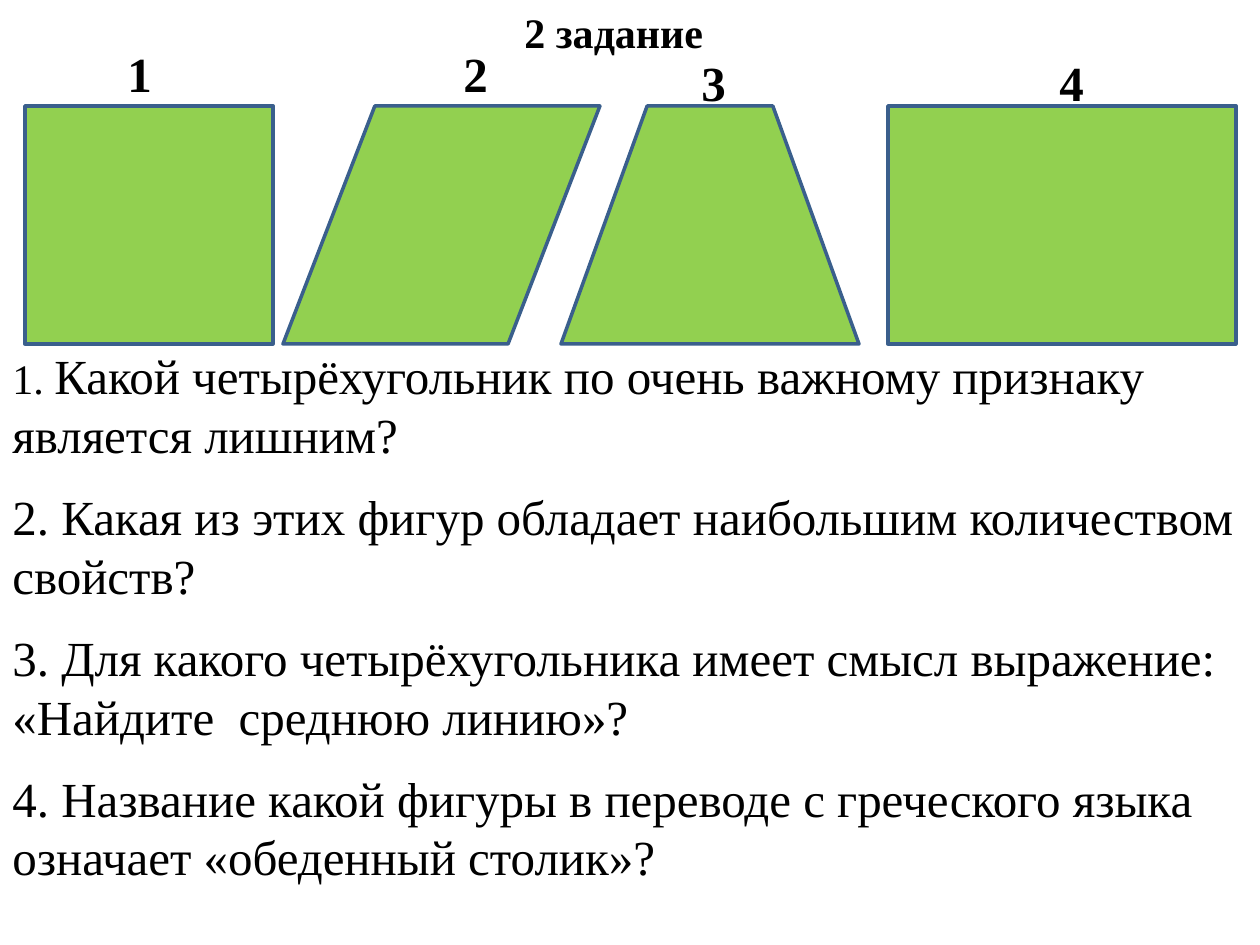
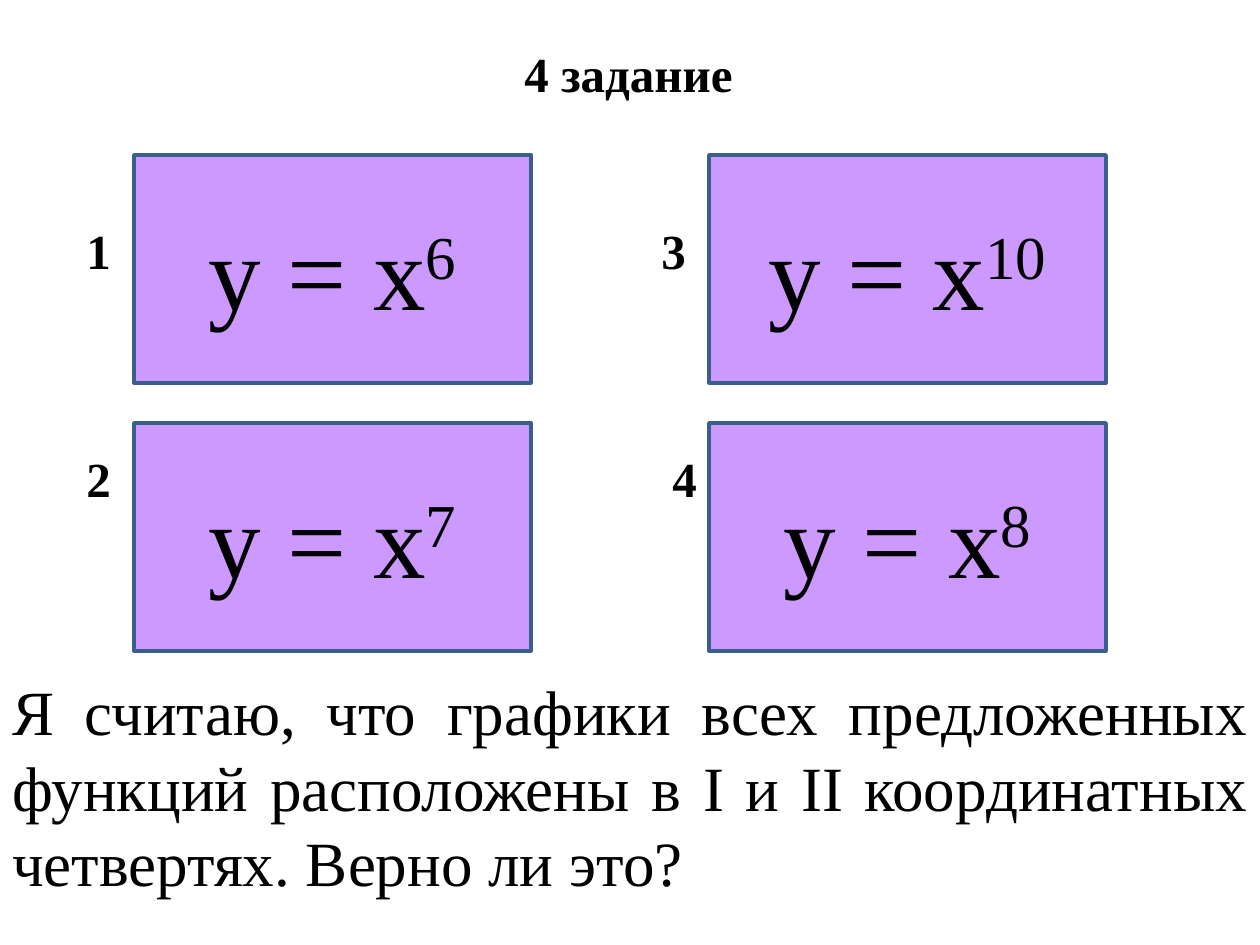
from dataclasses import dataclass

from pptx import Presentation
from pptx import util as u
from pptx.dml.color import RGBColor
from pptx.enum import shapes, text

SCALE = 914400 / 126  # EMU in one px
W, H = 1260, 945
SHAPE = shapes.MSO_SHAPE
ALIGN = text.PP_ALIGN


@dataclass(frozen=True)
class Theme:
    font: str = "Times New Roman"
    ink: str = "000000"
    outline: str = "3A5F8C"
    green: str = "92D050"
    violet: str = "CC99FF"
    outline_pt: int = 2
    small: int = 24
    body: int = 28
    large: int = 36
    formula: int = 60
    body_line: float = 33.5
    large_line: float = 43
    question_gap: float = 13.4


T = Theme()


def px(n):
    return u.Emu(round(n * SCALE))


def place(box):
    return [px(n) for n in box]


def add_run(p, words, size=T.body, bold=False, raised=False):
    r = p.add_run()
    r.text = words
    r.font.name, r.font.size, r.font.bold = T.font, u.Pt(size), bold
    r.font.color.rgb = RGBColor.from_string(T.ink)
    if raised:
        r._r.get_or_add_rPr().set("baseline", "30000")


def add_text(s, box, paragraphs, size=T.body, bold=False, wrap=True,
             align=ALIGN.LEFT, line=None, gap=0):
    """Each paragraph is a list of (words, size) runs or a plain string."""
    tf = s.shapes.add_textbox(*place(box)).text_frame
    tf.word_wrap = wrap
    for i, runs in enumerate(paragraphs):
        p = tf.add_paragraph() if i else tf.paragraphs[0]
        p.alignment, p.space_after = align, u.Pt(gap)
        if line:
            p.line_spacing = u.Pt(line)
        for words, run_size in [(runs, size)] if isinstance(runs, str) else runs:
            add_run(p, words, run_size, bold)


def add_figure(s, kind, box, fill, adjust=None):
    sp = s.shapes.add_shape(kind, *place(box))
    sp.shadow.inherit = False
    sp.fill.solid()
    sp.fill.fore_color.rgb = RGBColor.from_string(fill)
    sp.line.color.rgb = RGBColor.from_string(T.outline)
    sp.line.width = u.Pt(T.outline_pt)
    if adjust is not None:
        sp.adjustments[0] = adjust
    return sp


def add_title(s, words, y, size):
    add_text(s, (512, y, 236 if size == T.body else 205, 2.5 * size),
             [words], size=size, bold=True, wrap=False)


def add_number(s, x, y, n):
    add_text(s, (x, y, 50, 72), [str(n)], bold=True, wrap=False)


def quadrilaterals(s, box):
    """A row of numbered figures of equal height."""
    x, y, _, h = box
    # kind, left, width, adjustment, number's left and rise above the row
    row = [(SHAPE.RECTANGLE, 0, 248, None, 90, 69),
           (SHAPE.PARALLELOGRAM, 258, 317, 0.386, 426, 69),
           (SHAPE.TRAPEZOID, 536, 298, 0.362, 664, 60),
           (SHAPE.RECTANGLE, 863, 348, None, 1022, 60)]
    for n, (kind, left, w, adjust, number_x, rise) in enumerate(row, 1):
        add_figure(s, kind, (x + left, y, w, h), T.green, adjust)
        add_number(s, x + number_x, y - rise, n)


def formula_grid(s, box):
    """Two columns of formula cards, numbered down each column."""
    x, y, w, h = box
    card_w, card_h = 397, 228
    number_shift = [(-60, 59), (-60, 19), (-60, 59), (-49, 19)]
    for i, (power, (dx, dy)) in enumerate(zip(("6", "7", "10", "8"), number_shift)):
        col, row = divmod(i, 2)
        left, top = x + col * (w - card_w), y + row * (h - card_h)
        sp = add_figure(s, SHAPE.RECTANGLE, (left, top, card_w, card_h), T.violet)
        sp.text_frame.vertical_anchor = text.MSO_ANCHOR.MIDDLE
        p = sp.text_frame.paragraphs[0]
        p.alignment = ALIGN.CENTER
        add_run(p, "у = х", T.formula)
        add_run(p, power, T.formula, raised=True)
        add_number(s, left + dx, top + dy, i + 1)


def figures_slide(s):
    quadrilaterals(s, (25, 106, 1211, 238))
    add_title(s, "2 задание", 0, T.small)
    questions = [
        [("1. ", T.small),
         ("Какой четырёхугольник по очень важному признаку является лишним?", T.body)],
        "2. Какая из этих фигур обладает наибольшим количеством свойств?",
        "3. Для какого четырёхугольника имеет смысл выражение: «Найдите  среднюю линию»?",
        "4. Название какой фигуры в переводе с греческого языка означает «обеденный столик»?",
    ]
    add_text(s, (0, 340, W, H - 340), questions, line=T.body_line, gap=T.question_gap)


def functions_slide(s):
    add_title(s, "4 задание", 37, T.body)
    formula_grid(s, (134, 155, 972, 496))
    add_text(s, (0, 667, W, 238),
             ["Я считаю, что графики всех предложенных функций расположены "
              "в I и II координатных четвертях. Верно ли это?"],
             size=T.large, align=ALIGN.JUSTIFY, line=T.large_line)


def main():
    prs = Presentation()
    prs.slide_width, prs.slide_height = px(W), px(H)
    for build in (figures_slide, functions_slide):
        build(prs.slides.add_slide(prs.slide_layouts[6]))
    prs.save("out.pptx")


if __name__ == "__main__":
    main()
